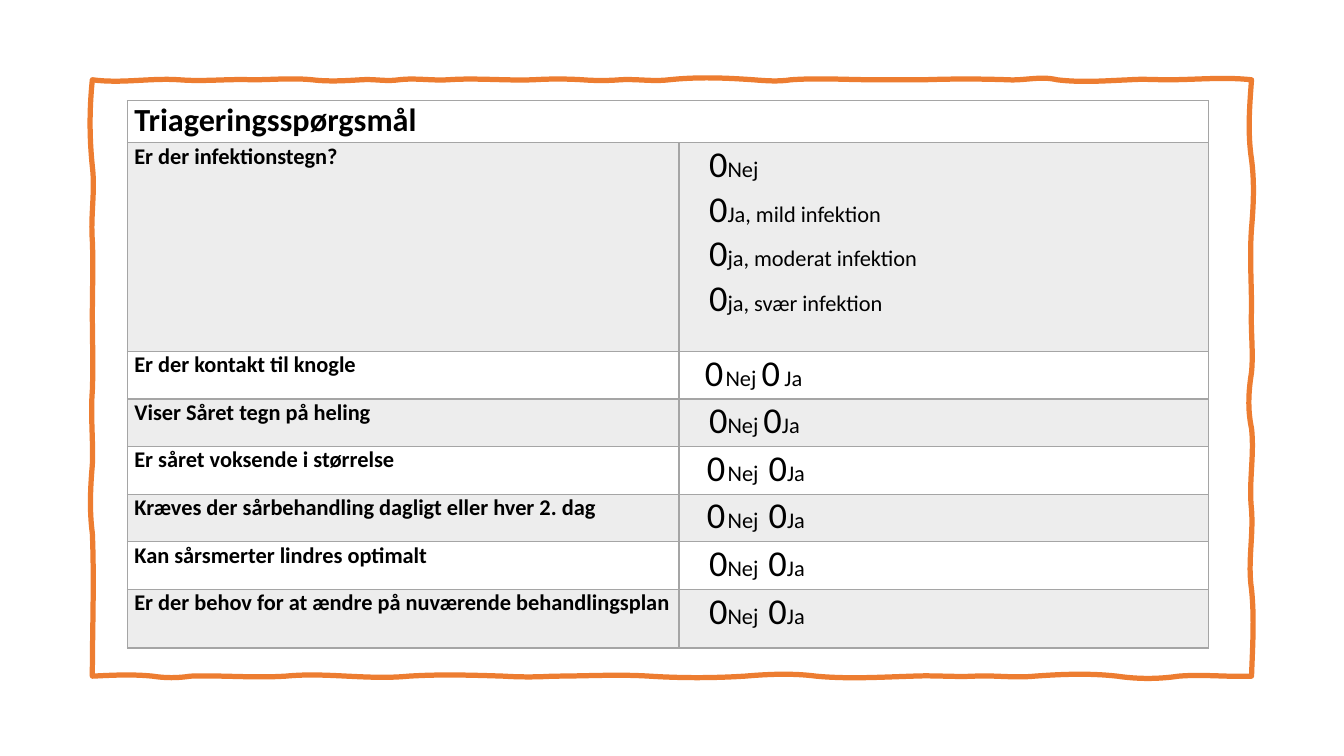
from lxml import etree
from pptx import Presentation
from pptx.dml.color import RGBColor
from pptx.oxml import parse_xml
from pptx.oxml.ns import nsdecls, qn
from pptx.util import Pt

ORANGE = RGBColor(0xED, 0x7D, 0x31)
GRAY = RGBColor(0xA5, 0xA5, 0xA5)
BLACK = RGBColor(0, 0, 0)
FONT = "Calibri"
TITLE_SIZE, TEXT_SIZE, MARK_SIZE, GAP_SIZE, WIDE_GAP = 23, 16, 26, 7, 14

# Content: question, answer indent, answer lines made of (text, size, letter spacing)
TITLE = "Triageringsspørgsmål"
MARK = ("0", MARK_SIZE, 0)
GAP = (" ", GAP_SIZE, 0)
NO, NO_SPACE, YES = [(text, TEXT_SIZE, 0) for text in ("Nej", "Nej ", "Ja")]
BREAK = (" ", TEXT_SIZE, 3.6)
INFECTION = ["Nej", "Ja, mild infektion", "ja, moderat infektion", "ja, svær infektion"]
PLAIN = [[MARK, NO, BREAK, MARK, YES]]
SPACED = [[MARK, GAP, NO, BREAK, MARK, YES]]
QUESTIONS = [
    ("Er der infektionstegn?", 16.5, [[MARK, (text, TEXT_SIZE, 0)] for text in INFECTION]),
    ("Er der kontakt til knogle", 13.5,
     [[MARK, GAP, NO_SPACE, MARK, (" ", WIDE_GAP, 0), YES]]),
    ("Viser Såret tegn på heling", 16.5, [[MARK, NO_SPACE, MARK, YES]]),
    ("Er såret voksende i størrelse", 15, SPACED),
    ("Kræves der sårbehandling dagligt eller hver 2. dag", 15, SPACED),
    ("Kan sårsmerter lindres optimalt", 16.5, PLAIN),
    ("Er der behov for at ændre på nuværende behandlingsplan", 16.5, PLAIN),
]

# Table geometry
TABLE_LEFT, TABLE_TOP = 91, 72
COLUMNS = [394, 378]
ROWS = [30, 149] + [34] * 5 + [42]

# Wavy frame: each edge lists (end of wave, first pull, second pull)
LEFT, TOP, RIGHT, BOTTOM = 66, 57, 894, 483
PULL = 0.72
BOTTOM_WAVES = [
    (109, -1, -2), (136, 2, 2), (204, -1, 2), (248, -2, -1), (292, 1, 2), (360, -2, -1),
    (395, 1, 1), (464, 0, -2), (532, 2, 2), (583, -2, -3), (652, 3, 1), (696, -1, 1),
    (739, -1, 2), (798, -2, -3), (842, 3, 3), (RIGHT, -2, 1)]
RIGHT_WAVES = [
    (421, 1, 3), (364, -4, 2), (306, -3, 3), (266, -4, -3), (221, 2, -1), (163, 0, -2),
    (114, 2, 3), (TOP, -4, -2)]
TOP_WAVES = [
    (834, -3, 0), (807, 0, -1), (755, 1, 3), (720, -4, 1), (660, -1, -1), (625, 0, 0),
    (565, 0, -2), (538, 2, 1), (478, -2, -3), (443, 2, -1), (416, 1, 1), (381, -1, -1),
    (320, 1, -2), (285, 1, -2), (258, 2, -1), (223, 1, 2), (180, -2, 0), (128, -1, 2),
    (LEFT, -2, 4)]
LEFT_WAVES = [
    (119, -3, -3), (172, 3, -2), (225, 1, 0), (279, 0, 1), (332, -2, 1), (381, -2, -3),
    (BOTTOM, 2, 0)]


def edge_curves(start, waves, level, horizontal):
    """Return two control points and an end point for each wave."""
    curves = []
    for end, first, second in waves:
        third = (end - start) / 3
        points = [(start + third, level + PULL * first),
                  (end - third, level + PULL * second), (end, level)]
        curves.append([point if horizontal else point[::-1] for point in points])
        start = end
    return curves


def add_run(para, text, size, spacing=0, bold=False):
    span = para.add_run()
    span.text = text
    span.font.name = FONT
    span.font.size = Pt(size)
    span.font.bold = bold
    span.font.color.rgb = BLACK
    if spacing:
        span.font._element.set("spc", str(round(spacing * 100)))


def style_cell(cell, shaded):
    cell.margin_left = cell.margin_right = Pt(5)
    cell.margin_top = cell.margin_bottom = 0
    if shaded:
        cell.fill.solid()
        cell.fill.fore_color.rgb = GRAY
    else:
        cell.fill.background()
    properties = cell._tc.get_or_add_tcPr()
    for color in properties.iter(qn("a:srgbClr")):
        etree.SubElement(color, qn("a:alpha"), val="20000")
    for position, side in enumerate(("lnL", "lnR", "lnT", "lnB")):
        properties.insert(position, parse_xml(
            f'<a:{side} {nsdecls("a")} w="{Pt(1)}"><a:solidFill>'
            f'<a:srgbClr val="{GRAY}"/></a:solidFill></a:{side}>'))


deck = Presentation()
deck.slide_width, deck.slide_height = Pt(960), Pt(540)
page = deck.slides.add_slide(deck.slide_layouts[6])

# Frame
curves = (edge_curves(LEFT, BOTTOM_WAVES, BOTTOM, True)
          + edge_curves(BOTTOM, RIGHT_WAVES, RIGHT, False)
          + edge_curves(RIGHT, TOP_WAVES, TOP, True)
          + edge_curves(TOP, LEFT_WAVES, LEFT, False))
builder = page.shapes.build_freeform(Pt(LEFT), Pt(BOTTOM))
builder.add_line_segments([(Pt(x), Pt(y)) for *_, (x, y) in curves], close=True)
frame = builder.convert_to_shape()
frame.shadow.inherit = False
frame.fill.background()
frame.line.color.rgb = ORANGE
frame.line.width = Pt(3.75)

# Bend the straight sides into waves
sides = list(frame._element.iter(qn("a:lnTo")))
for side, (first, second, _) in zip(sides, curves):
    side.tag = qn("a:cubicBezTo")
    for position, (x, y) in enumerate((first, second)):
        side.insert(position, parse_xml(
            f'<a:pt {nsdecls("a")} x="{Pt(x - LEFT)}" y="{Pt(y - TOP)}"/>'))

# Table grid
table = page.shapes.add_table(
    len(ROWS), len(COLUMNS), Pt(TABLE_LEFT), Pt(TABLE_TOP),
    Pt(sum(COLUMNS)), Pt(sum(ROWS))).table
table.first_row = table.horz_banding = False
for column, width in zip(table.columns, COLUMNS):
    column.width = Pt(width)
for number, (row, height) in enumerate(zip(table.rows, ROWS)):
    row.height = Pt(height)
    for cell in row.cells:
        style_cell(cell, number % 2 == 1)

# Heading row
table.cell(0, 0).merge(table.cell(0, 1))
add_run(table.cell(0, 0).text_frame.paragraphs[0], TITLE, TITLE_SIZE, bold=True)

# Questions and answers
for number, (question, indent, answers) in enumerate(QUESTIONS, start=1):
    add_run(table.cell(number, 0).text_frame.paragraphs[0], question, TEXT_SIZE, bold=True)
    answer_text = table.cell(number, 1).text_frame
    for line, runs in enumerate(answers):
        para = answer_text.add_paragraph() if line else answer_text.paragraphs[0]
        para._p.get_or_add_pPr().set("marL", str(Pt(indent)))
        for text, size, spacing in runs:
            add_run(para, text, size, spacing)

deck.save("out.pptx")
